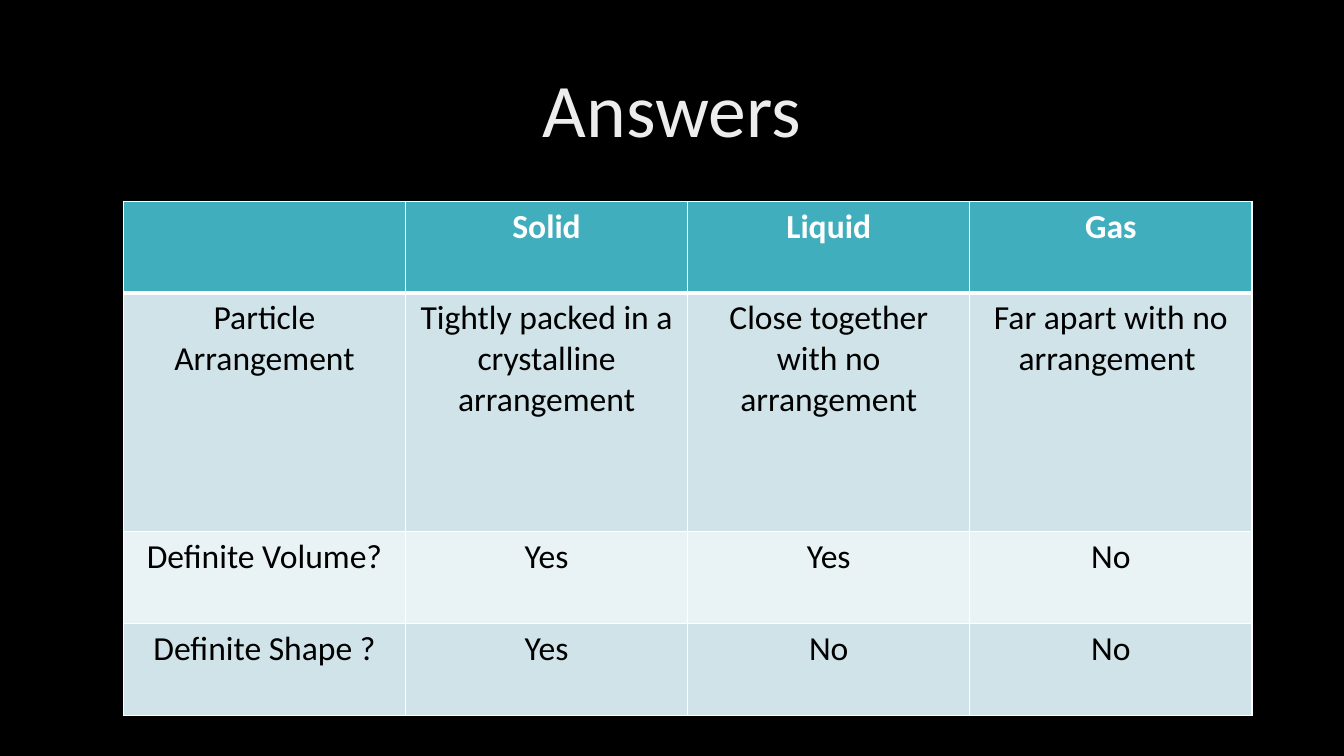
from lxml.etree import SubElement
from pptx import Presentation
from pptx.dml.color import RGBColor
from pptx.enum.text import MSO_ANCHOR, PP_ALIGN
from pptx.oxml.ns import qn
from pptx.util import Cm, Pt

BLACK = RGBColor(0, 0, 0)
WHITE = RGBColor(0xFF, 0xFF, 0xFF)
SILVER = RGBColor(0xED, 0xED, 0xED)
TEAL = RGBColor(0x41, 0xAE, 0xBD)
MIST = RGBColor(0xCF, 0xE3, 0xE8)
PALE = RGBColor(0xE9, 0xF2, 0xF4)

FONT = "Calibri"
WIDTH = Cm(7.11)
HEIGHTS = [Cm(2.31), Cm(6.02), Cm(2.31), Cm(2.31)]
ANSWERS = [
    ["", "Solid", "Liquid", "Gas"],
    ["Particle Arrangement", "Tightly packed in a crystalline arrangement",
     "Close together with no arrangement", "Far apart with no arrangement "],
    ["Definite Volume?", "Yes", "Yes", "No"],
    ["Definite Shape ?", "Yes", "No", "No"],
]


def write(frame, text, size, color, bold=False):
    para = frame.paragraphs[0]
    para.alignment = PP_ALIGN.CENTER
    if text:
        run = para.add_run()
        run.text = text
        run.font.name = FONT
        run.font.size = Pt(size)
        run.font.bold = bold
        run.font.color.rgb = color
    return para


def add_title(slide, text):
    title = slide.shapes.title
    title.left, title.top = Cm(2.33), Cm(1.01)
    title.width, title.height = Cm(29.21), Cm(3.68)
    title.text_frame.vertical_anchor = MSO_ANCHOR.MIDDLE
    write(title.text_frame, text, 54, SILVER).line_spacing = 0.9


def edge(cell, side, width):
    props = cell._tc.get_or_add_tcPr()
    line = SubElement(props, qn("a:ln" + side), w=str(Pt(width)))
    fill = SubElement(line, qn("a:solidFill"))
    SubElement(fill, qn("a:srgbClr"), val=str(WHITE))


def style(cell, row):
    thick = {"T": row == 1, "B": row == 0}
    for side in "LRTB":
        edge(cell, side, 3 if thick.get(side) else 1)
    cell.fill.solid()
    if row == 0:
        cell.fill.fore_color.rgb = TEAL
    else:
        cell.fill.fore_color.rgb = MIST if row % 2 else PALE


def add_grid(slide, rows):
    count = len(rows[0])
    frame = slide.shapes.add_table(
        len(rows), count, Cm(3.11), Cm(5.07), WIDTH * count, sum(HEIGHTS))
    table = frame.table
    for col in table.columns:
        col.width = WIDTH
    for i, (texts, height) in enumerate(zip(rows, HEIGHTS)):
        table.rows[i].height = height
        head = i == 0
        for j, text in enumerate(texts):
            cell = table.cell(i, j)
            style(cell, i)
            write(cell.text_frame, text, 24, WHITE if head else BLACK, head)


def main():
    deck = Presentation()
    deck.slide_width, deck.slide_height = Cm(33.87), Cm(19.05)
    slide = deck.slides.add_slide(deck.slide_layouts[5])
    back = slide.background.fill
    back.solid()
    back.fore_color.rgb = BLACK
    add_title(slide, "Answers")
    add_grid(slide, ANSWERS)
    deck.save("out.pptx")


if __name__ == "__main__":
    main()
